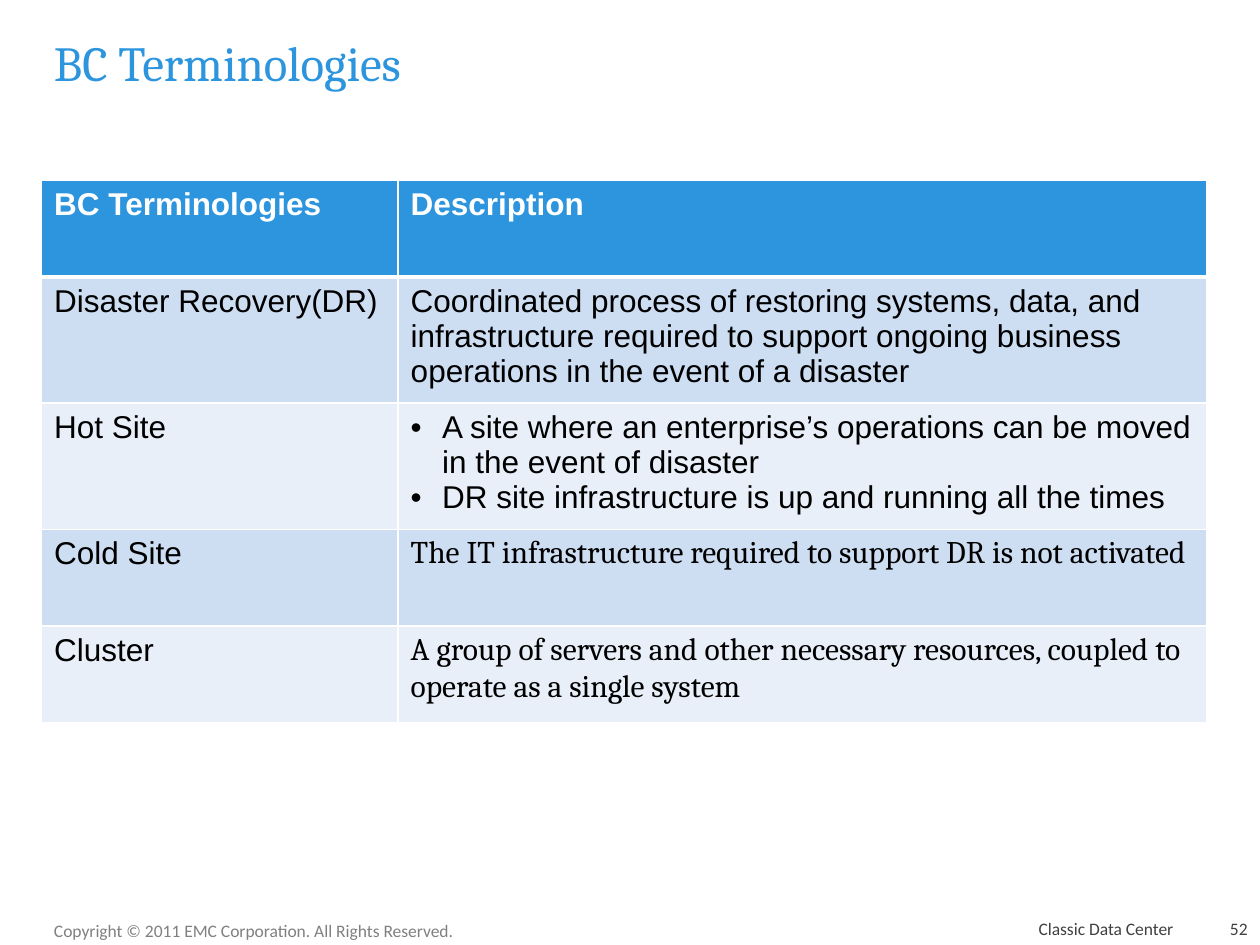
from lxml.etree import SubElement
from pptx import Presentation
from pptx.dml.color import RGBColor
from pptx.enum.text import MSO_ANCHOR, PP_ALIGN
from pptx.oxml import parse_xml
from pptx.oxml.ns import nsdecls, qn
from pptx.util import Inches, Pt

BLUE = RGBColor(0x2C, 0x95, 0xDD)
BAND_DARK = RGBColor(0xCD, 0xDD, 0xF2)
BAND_LIGHT = RGBColor(0xE8, 0xEF, 0xF9)
WHITE = RGBColor(0xFF, 0xFF, 0xFF)
BLACK = RGBColor(0x00, 0x00, 0x00)
GRAY = RGBColor(0x80, 0x80, 0x80)
DARK_GRAY = RGBColor(0x40, 0x40, 0x40)

HEADER = ("BC Terminologies", "Description")
# Term, description paragraphs, description font
TERMS = [
    ("Disaster Recovery(DR)",
     ["Coordinated process of restoring systems, data, and infrastructure "
      "required to support ongoing business operations in the event of a disaster"],
     "Arial"),
    ("Hot Site",
     ["A site where an enterprise’s operations can be moved in the event of disaster",
      "DR site infrastructure is up and running all the times"],
     "Arial"),
    ("Cold Site",
     ["The IT infrastructure required to support DR is not activated"],
     "Cambria"),
    ("Cluster",
     ["A group of servers and other necessary resources, coupled to operate "
      "as a single system"],
     "Cambria"),
]


class SlideBuilder:
    """Holds the text style and the slide being built."""

    def __init__(self, slide, size=18, font="Arial"):
        self.slide = slide
        self.size = size
        self.font = font

    def style(self, p, color, size=None, font=None, bold=False):
        p.font.size = Pt(size or self.size)
        p.font.name = font or self.font
        p.font.color.rgb = color
        p.font.bold = bold

    def text(self, text, left, top, width, height, color, size, font,
             anchor=MSO_ANCHOR.BOTTOM, align=PP_ALIGN.LEFT):
        box = self.slide.shapes.add_textbox(
            Inches(left), Inches(top), Inches(width), Inches(height))
        tf = box.text_frame
        tf.word_wrap = True
        tf.vertical_anchor = anchor
        p = tf.paragraphs[0]
        p.text = text
        p.alignment = align
        self.style(p, color, size, font)

    def table(self, left, top, col_widths, row_height, rows):
        table = self.slide.shapes.add_table(
            rows, len(col_widths), Inches(left), Inches(top),
            Inches(sum(col_widths)), Inches(row_height * rows)).table
        for column, width in zip(table.columns, col_widths):
            column.width = Inches(width)
        for row in table.rows:
            row.height = Inches(row_height)
        return table

    def cell(self, cell, lines, fill, color, font=None, bold=False,
             top_line=1, bottom_line=1):
        cell.fill.solid()
        cell.fill.fore_color.rgb = fill
        self.borders(cell, top_line, bottom_line)
        tf = cell.text_frame
        for i, line in enumerate(lines):
            p = tf.paragraphs[0] if i == 0 else tf.add_paragraph()
            p.text = line
            if len(lines) > 1:
                self.bullet(p)
            self.style(p, color, font=font, bold=bold)

    def borders(self, cell, top_line, bottom_line):
        tc_pr = cell._tc.get_or_add_tcPr()
        sides = (("L", 1), ("R", 1), ("T", top_line), ("B", bottom_line))
        for i, (side, width) in enumerate(sides):
            tc_pr.insert(i, parse_xml(
                f'<a:ln{side} {nsdecls("a")} w="{Pt(width)}"><a:solidFill>'
                f'<a:srgbClr val="{WHITE}"/></a:solidFill></a:ln{side}>'))

    def bullet(self, p):
        p_pr = p._p.get_or_add_pPr()
        p_pr.set("marL", str(Inches(0.25)))
        p_pr.set("indent", str(Inches(-0.25)))
        SubElement(p_pr, qn("a:buFont")).set("typeface", "Arial")
        SubElement(p_pr, qn("a:buChar")).set("char", "•")


def main():
    prs = Presentation()
    prs.slide_width, prs.slide_height = Inches(10), Inches(7.5)
    s = SlideBuilder(prs.slides.add_slide(prs.slide_layouts[6]))

    # Title
    s.text("BC Terminologies", 0.33, 0.08, 9.25, 0.83, BLUE, 28, "Cambria",
           anchor=MSO_ANCHOR.MIDDLE)

    # Terminology table
    table = s.table(0.33, 1.43, (2.83, 6.42), 0.77, len(TERMS) + 1)
    for col, heading in enumerate(HEADER):
        s.cell(table.cell(0, col), [heading], BLUE, WHITE, bold=True, bottom_line=3)
    for row, (term, description, font) in enumerate(TERMS, start=1):
        fill = BAND_DARK if row % 2 else BAND_LIGHT
        top_line = 3 if row == 1 else 1
        s.cell(table.cell(row, 0), [term], fill, BLACK, top_line=top_line)
        s.cell(table.cell(row, 1), description, fill, BLACK, font, top_line=top_line)

    # Footer
    s.text("Copyright © 2011 EMC Corporation. All Rights Reserved.",
           0.33, 7.25, 3.42, 0.27, GRAY, 10, "Calibri", anchor=MSO_ANCHOR.TOP)
    s.text("Classic Data Center", 4.83, 7.25, 4.58, 0.25, DARK_GRAY, 10, "Calibri",
           align=PP_ALIGN.RIGHT)
    s.text("52", 9.5, 7.25, 0.5, 0.25, DARK_GRAY, 10, "Calibri",
           align=PP_ALIGN.RIGHT)

    prs.save("out.pptx")


if __name__ == "__main__":
    main()
